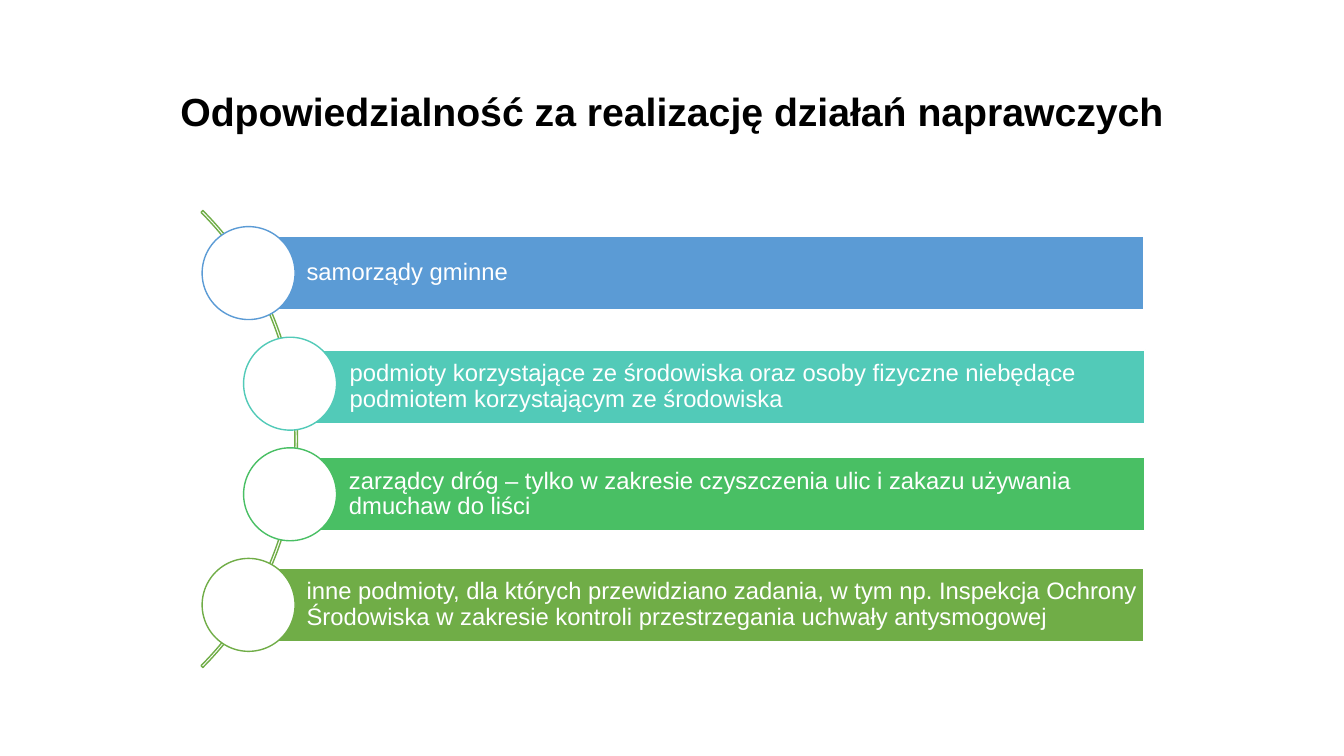
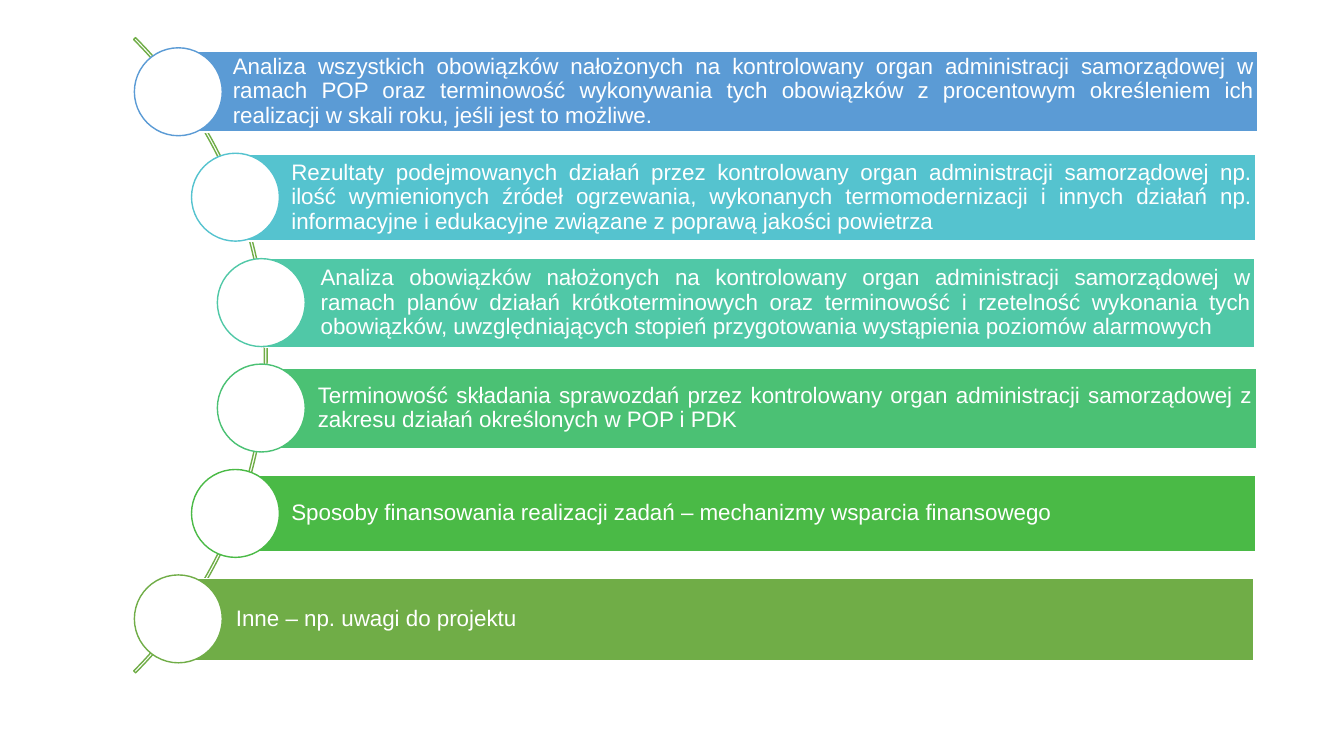
from dataclasses import dataclass
from math import sqrt

from pptx import Presentation
from pptx.dml.color import RGBColor
from pptx.enum import shapes, text
from pptx.util import Pt


# Theme shared by all slides
@dataclass(frozen=True)
class Theme:
    font: str = "Arial"
    title_size: float = 28
    line_width: float = 1
    line_spacing: float = 0.9
    black: str = "000000"
    white: str = "FFFFFF"
    arc: str = "70AD47"


THEME = Theme()


@dataclass(frozen=True)
class Bar:
    """One labelled bar, with its box in points."""
    label: str
    color: str
    left: float
    top: float
    width: float
    height: float


@dataclass(frozen=True)
class Curve:
    """Bars whose circles sit at equal vertical steps along an arc, in points."""
    center_x: float
    center_y: float
    radius: float
    thickness: float
    circle: float
    pitch: float
    text_size: float
    indent: float
    inset: float
    align: text.PP_ALIGN
    bars: tuple[Bar, ...]


# Content
TITLE = "Odpowiedzialność za realizację działań naprawczych"

RESPONSIBILITY = Curve(
    center_x=-18.3, center_y=313.6, radius=230.8, thickness=0.004,
    circle=66.4, pitch=79, text_size=17, indent=41.8, inset=3.4,
    align=text.PP_ALIGN.LEFT,
    bars=(
        Bar("samorządy gminne", "5B9BD5", 177.2, 168.8, 640, 52.6),
        Bar("podmioty korzystające ze środowiska oraz osoby fizyczne niebędące "
            "podmiotem korzystającym ze środowiska",
            "52CAB8", 208, 250, 610, 52.6),
        Bar("zarządcy dróg – tylko w zakresie czyszczenia ulic i zakazu używania "
            "dmuchaw do liści", "49BF64", 207.4, 326.8, 610, 52.6),
        Bar("inne podmioty, dla których przewidziano zadania, w tym np. Inspekcja "
            "Ochrony Środowiska w zakresie kontroli przestrzegania uchwały "
            "antysmogowej", "70AD47", 177.2, 405.8, 640, 52.6),
    ),
)

SCOPE = Curve(
    center_x=-130, center_y=253.8, radius=320.8, thickness=0.003,
    circle=62.8, pitch=75.3, text_size=16, indent=39.6, inset=2.9,
    align=text.PP_ALIGN.JUSTIFY,
    bars=(
        Bar("Analiza wszystkich obowiązków nałożonych na kontrolowany organ "
            "administracji samorządowej w ramach POP oraz terminowość wykonywania "
            "tych obowiązków z procentowym określeniem ich realizacji w skali "
            "roku, jeśli jest to możliwe.", "5B9BD5", 126.7, 36.7, 771.8, 57.6),
        Bar("Rezultaty podejmowanych działań przez kontrolowany organ administracji "
            "samorządowej np. ilość wymienionych źródeł ogrzewania, wykonanych "
            "termomodernizacji i innych działań np. informacyjne i edukacyjne "
            "związane z poprawą jakości powietrza",
            "55C3CF", 168.5, 110.2, 728.6, 61.9),
        Bar("Analiza obowiązków nałożonych na kontrolowany organ administracji "
            "samorządowej w ramach planów działań krótkoterminowych oraz "
            "terminowość i rzetelność wykonania tych obowiązków, uwzględniających "
            "stopień przygotowania wystąpienia poziomów alarmowych",
            "50C8A7", 189.4, 184.3, 707, 64.1),
        Bar("Terminowość składania sprawozdań przez kontrolowany organ administracji "
            "samorządowej z zakresu działań określonych w POP i PDK",
            "4BC174", 187.4, 262.8, 710, 57.6),
        Bar("Sposoby finansowania realizacji zadań – mechanizmy wsparcia finansowego",
            "4ABA46", 168.5, 339.8, 728.6, 54),
        Bar("Inne – np. uwagi do projektu", "70AD47", 128.9, 413.3, 766.8, 58.3),
    ),
)


# Drawing helpers
def add_span(para, words: str, size: float, color: str, bold: bool = False) -> None:
    span = para.add_run()
    span.text = words
    span.font.name = THEME.font
    span.font.size = Pt(size)
    span.font.bold = bold
    span.font.color.rgb = RGBColor.from_string(color)


def add_box(page, kind, left: float, top: float, width: float, height: float,
            line: str, fill: str | None = None):
    box = page.shapes.add_shape(kind, Pt(left), Pt(top), Pt(width), Pt(height))
    box.shadow.inherit = False
    if fill:
        box.fill.solid()
        box.fill.fore_color.rgb = RGBColor.from_string(fill)
    else:
        box.fill.background()
    box.line.color.rgb = RGBColor.from_string(line)
    box.line.width = Pt(THEME.line_width)
    return box


def add_title(page, words: str) -> None:
    box = page.shapes.title
    box.left, box.top, box.width, box.height = Pt(66), Pt(28.8), Pt(828), Pt(104.4)
    frame = box.text_frame
    frame.word_wrap = True
    frame.vertical_anchor = text.MSO_ANCHOR.MIDDLE
    para = frame.paragraphs[0]
    para.alignment = text.PP_ALIGN.CENTER
    para.line_spacing = THEME.line_spacing
    add_span(para, words, THEME.title_size, THEME.black, bold=True)


def add_bar(page, bar: Bar, curve: Curve) -> None:
    box = add_box(page, shapes.MSO_SHAPE.RECTANGLE, bar.left, bar.top,
                  bar.width, bar.height, THEME.white, bar.color)
    frame = box.text_frame
    frame.word_wrap = True
    frame.vertical_anchor = text.MSO_ANCHOR.MIDDLE
    frame.margin_left = Pt(curve.indent)
    frame.margin_top = frame.margin_right = frame.margin_bottom = Pt(curve.inset)
    para = frame.paragraphs[0]
    para.alignment = curve.align
    para.line_spacing = THEME.line_spacing
    add_span(para, bar.label, curve.text_size, THEME.white)


def add_curve(page, curve: Curve) -> None:
    # Arc from 315 to 45 degrees; angle adjustments count 0.6 per degree
    arc = add_box(page, shapes.MSO_SHAPE.BLOCK_ARC,
                  curve.center_x - curve.radius, curve.center_y - curve.radius,
                  2 * curve.radius, 2 * curve.radius, THEME.arc)
    for index, value in enumerate((315 * 0.6, 45 * 0.6, curve.thickness)):
        arc.adjustments[index] = value

    # Bars, each with a circle centred on the inner edge of the arc
    inner = curve.radius * (1 - 2 * curve.thickness)
    for index, bar in enumerate(curve.bars):
        add_bar(page, bar, curve)
        rise = (index - (len(curve.bars) - 1) / 2) * curve.pitch
        center_x = curve.center_x + sqrt(inner ** 2 - rise ** 2)
        add_box(page, shapes.MSO_SHAPE.OVAL, center_x - curve.circle / 2,
                curve.center_y + rise - curve.circle / 2,
                curve.circle, curve.circle, bar.color, THEME.white)


def main() -> None:
    deck = Presentation()
    deck.slide_width, deck.slide_height = Pt(960), Pt(540)
    title_only, blank = deck.slide_layouts[5], deck.slide_layouts[6]

    # Slide 1: responsibility
    page = deck.slides.add_slide(title_only)
    add_title(page, TITLE)
    add_curve(page, RESPONSIBILITY)

    # Slide 2: scope of the review
    page = deck.slides.add_slide(blank)
    add_curve(page, SCOPE)

    deck.save("out.pptx")


if __name__ == "__main__":
    main()
